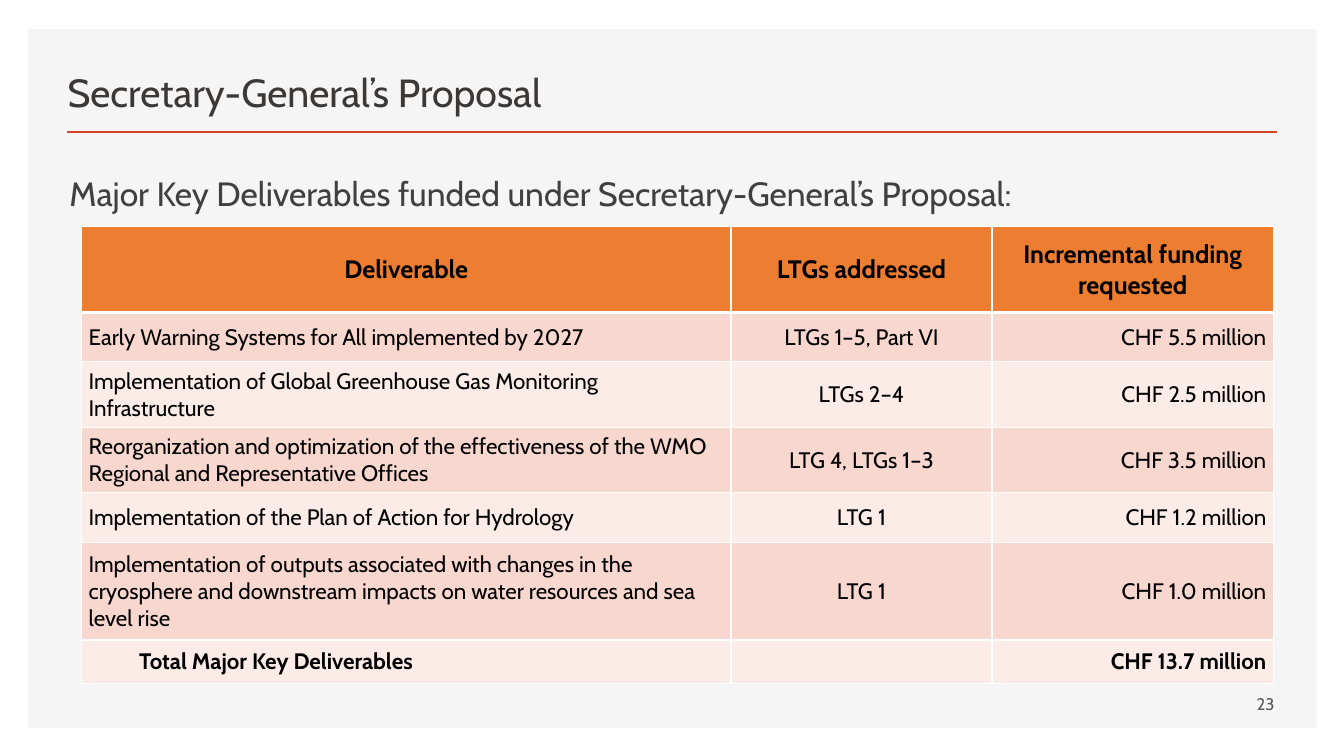
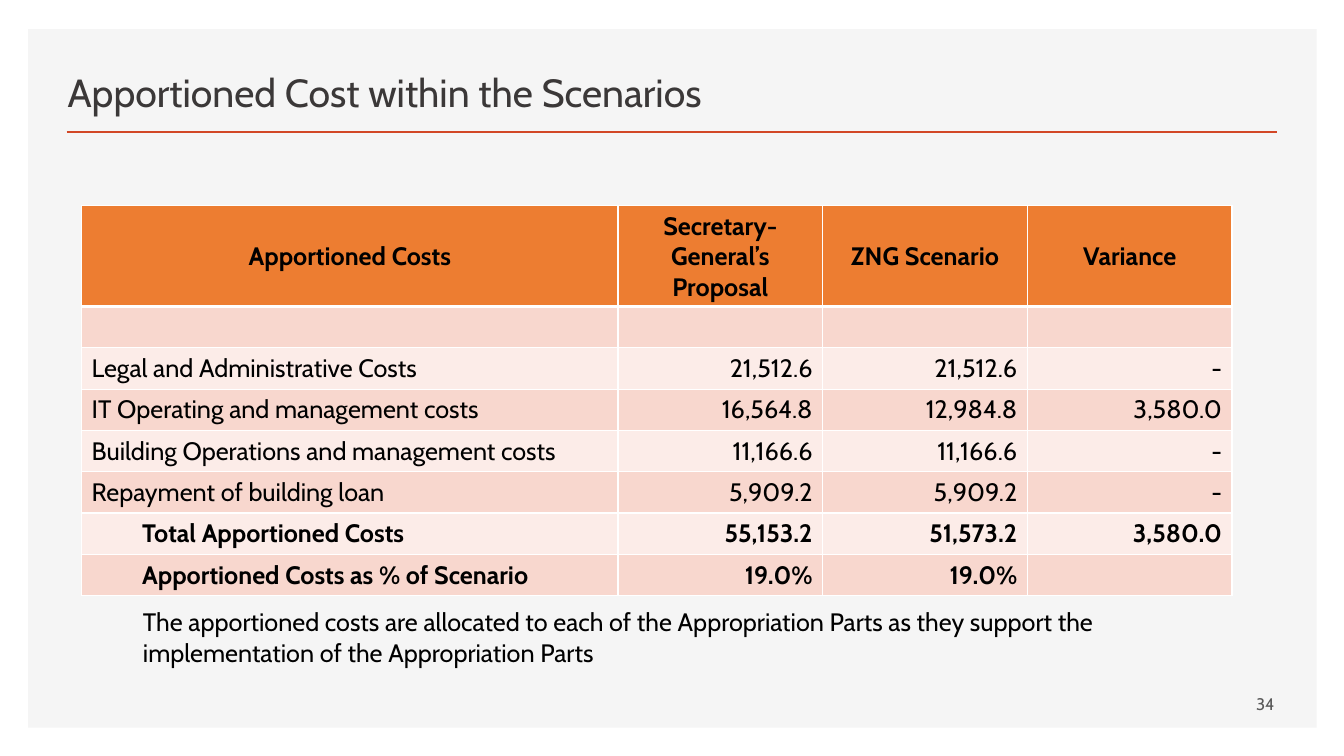
from dataclasses import dataclass

from lxml import etree
from pptx import Presentation
from pptx.dml.color import RGBColor
from pptx.enum import shapes, text
from pptx.oxml import ns
from pptx.util import Inches, Pt

LEFT, CENTER, RIGHT = text.PP_ALIGN.LEFT, text.PP_ALIGN.CENTER, text.PP_ALIGN.RIGHT


@dataclass(frozen=True)
class Theme:
    font: str = "Cabin"
    panel: str = "F5F5F5"
    rule: str = "D24726"
    title: str = "3B3838"
    subtitle: str = "404040"
    number: str = "595959"
    body: str = "000000"
    header: str = "ED7D31"
    bands: tuple[str, str] = ("F8D7CE", "FCECE8")
    border: str = "FFFFFF"
    title_size: int = 28
    subtitle_size: int = 24
    body_size: int = 18
    small_size: int = 16
    number_size: int = 12


THEME = Theme()


@dataclass(frozen=True)
class Box:
    left: float
    top: float
    width: float
    height: float

    def lengths(self) -> tuple:
        return tuple(Inches(value) for value in (self.left, self.top, self.width, self.height))


@dataclass(frozen=True)
class TableStyle:
    size: int
    margins: tuple[float, float]
    spacing: int = 0


@dataclass(frozen=True)
class TableSpec:
    left: float
    top: float
    columns: tuple[float, ...]
    heights: tuple[float, ...]
    alignments: tuple
    rows: tuple[tuple[str, ...], ...]
    total_rows: int
    style: TableStyle


PANEL = Box(0.28, 0.29, 12.78, 6.93)
TITLE = Box(0.57, 0.49, 9.37, 0.7)
SUBTITLE = Box(0.59, 1.67, 11.02, 0.5)
NOTE = Box(1.32, 5.97, 10.43, 0.71)
NUMBER = Box(9.16, 6.78, 3.58, 0.4)
HEADER_STYLE = TableStyle(THEME.body_size, (0.1, 0.05))
TOTAL_INDENT = 0.5

DELIVERABLES = TableSpec(
    left=0.81,
    top=2.25,
    columns=(6.44, 2.59, 2.79),
    heights=(0.85, 0.49, 0.65, 0.65, 0.49, 0.97, 0.43),
    alignments=(LEFT, CENTER, RIGHT),
    rows=(
        ("Deliverable", "LTGs addressed", "Incremental funding requested"),
        ("Early Warning Systems for All implemented by 2027", "LTGs 1–5, Part VI", "CHF 5.5 million"),
        ("Implementation of Global Greenhouse Gas Monitoring Infrastructure", "LTGs 2–4", "CHF 2.5 million"),
        (
            "Reorganization and optimization of the effectiveness of the WMO Regional and Representative Offices",
            "LTG 4, LTGs 1–3",
            "CHF 3.5 million",
        ),
        ("Implementation of the Plan of Action for Hydrology", "LTG 1", "CHF 1.2 million"),
        (
            "Implementation of outputs associated with changes in the cryosphere "
            "and downstream impacts on water resources and sea level rise",
            "LTG 1",
            "CHF 1.0 million",
        ),
        ("Total Major Key Deliverables", "", "CHF 13.7 million"),
    ),
    total_rows=1,
    style=TableStyle(THEME.small_size, (0.07, 0), 3),
)

COSTS = TableSpec(
    left=0.81,
    top=2.04,
    columns=(5.32,) + (2.03,) * 3,
    heights=(0.97,) + (0.41,) * 7,
    alignments=(LEFT, RIGHT, RIGHT, RIGHT),
    rows=(
        ("Apportioned Costs", "Secretary-General’s Proposal", "ZNG Scenario", "Variance"),
        ("", "", "", ""),
        ("Legal and Administrative Costs", "21,512.6", "21,512.6", "-"),
        ("IT Operating and management costs", "16,564.8", "12,984.8", "3,580.0"),
        ("Building Operations and management costs", "11,166.6", "11,166.6", "-"),
        ("Repayment of building loan", "5,909.2", "5,909.2", "-"),
        ("Total Apportioned Costs", "55,153.2", "51,573.2", "3,580.0"),
        ("Apportioned Costs as % of Scenario", "19.0%", "19.0%", ""),
    ),
    total_rows=2,
    style=TableStyle(THEME.body_size, (0.1, 0.05)),
)


def write(frame, words: str, size: int, color: str, alignment=LEFT, bold: bool = False) -> None:
    frame.text = words
    frame.word_wrap = True
    paragraph = frame.paragraphs[0]
    paragraph.alignment = alignment
    for run in paragraph.runs:
        run.font.name = THEME.font
        run.font.size = Pt(size)
        run.font.bold = bold
        run.font.color.rgb = RGBColor.from_string(color)


def add_text(slide, box: Box, words: str, size: int, color: str, alignment=LEFT, anchor=text.MSO_ANCHOR.TOP) -> None:
    frame = slide.shapes.add_textbox(*box.lengths()).text_frame
    write(frame, words, size, color, alignment)
    frame.vertical_anchor = anchor


def build_layout(layout, slide) -> None:
    panel = slide.shapes.add_shape(shapes.MSO_SHAPE.RECTANGLE, *PANEL.lengths())
    panel.shadow.inherit = False
    panel.fill.solid()
    panel.fill.fore_color.rgb = RGBColor.from_string(THEME.panel)
    panel.line.fill.background()
    rule = slide.shapes.add_connector(
        shapes.MSO_CONNECTOR.STRAIGHT, Inches(0.66), Inches(1.31), Inches(12.67), Inches(1.31)
    )
    rule.line.color.rgb = RGBColor.from_string(THEME.rule)
    rule.line.width = Pt(2)
    etree.SubElement(rule._element.spPr, ns.qn("a:effectLst"))
    for position, shape in enumerate((panel, rule), start=2):
        layout.shapes._spTree.insert(position, shape._element)


def add_slide(presentation, title: str, number: int):
    layout = presentation.slide_layouts.get_by_name("Title Only")
    slide = presentation.slides.add_slide(layout)
    if len(presentation.slides) == 1:
        build_layout(layout, slide)
    placeholder = slide.shapes.title
    placeholder.left, placeholder.top, placeholder.width, placeholder.height = TITLE.lengths()
    write(placeholder.text_frame, title, THEME.title_size, THEME.title)
    placeholder.text_frame.vertical_anchor = text.MSO_ANCHOR.BOTTOM
    add_text(slide, NUMBER, str(number), THEME.number_size, THEME.number, RIGHT, text.MSO_ANCHOR.MIDDLE)
    return slide


def set_borders(cell, is_header: bool) -> None:
    properties = cell._tc.get_or_add_tcPr()
    for side in "LRTB":
        width = 3 if is_header and side == "B" else 1
        line = etree.SubElement(properties, ns.qn(f"a:ln{side}"), w=str(Pt(width)))
        fill = etree.SubElement(line, ns.qn("a:solidFill"))
        etree.SubElement(fill, ns.qn("a:srgbClr"), val=THEME.border)


def fill_cell(cell, words: str, style: TableStyle, color: str, alignment, bold: bool, indent: float) -> None:
    horizontal, vertical = style.margins
    cell.margin_left = Inches(horizontal + indent)
    cell.margin_right = Inches(horizontal)
    cell.margin_top = cell.margin_bottom = Inches(vertical)
    cell.vertical_anchor = text.MSO_ANCHOR.MIDDLE
    cell.fill.solid()
    cell.fill.fore_color.rgb = RGBColor.from_string(color)
    write(cell.text_frame, words, style.size, THEME.body, alignment, bold)
    paragraph = cell.text_frame.paragraphs[0]
    paragraph.space_before = paragraph.space_after = Pt(style.spacing)


def add_table(slide, spec: TableSpec) -> None:
    box = Box(spec.left, spec.top, sum(spec.columns), sum(spec.heights))
    table = slide.shapes.add_table(len(spec.rows), len(spec.columns), *box.lengths()).table
    for column, width in zip(table.columns, spec.columns):
        column.width = Inches(width)
    first_total = len(spec.rows) - spec.total_rows
    for row_index, (row, height) in enumerate(zip(spec.rows, spec.heights)):
        table.rows[row_index].height = Inches(height)
        is_header = row_index == 0
        is_total = row_index >= first_total
        style = HEADER_STYLE if is_header else spec.style
        color = THEME.header if is_header else THEME.bands[(row_index - 1) % 2]
        for column_index, words in enumerate(row):
            cell = table.cell(row_index, column_index)
            alignment = CENTER if is_header else spec.alignments[column_index]
            indent = TOTAL_INDENT if is_total and column_index == 0 else 0
            set_borders(cell, is_header)
            fill_cell(cell, words, style, color, alignment, is_header or is_total, indent)


def main() -> None:
    presentation = Presentation()
    presentation.slide_width = Inches(13.33)
    presentation.slide_height = Inches(7.5)

    proposal = add_slide(presentation, "Secretary-General’s Proposal", 23)
    add_text(
        proposal,
        SUBTITLE,
        "Major Key Deliverables funded under Secretary-General’s Proposal:",
        THEME.subtitle_size,
        THEME.subtitle,
    )
    add_table(proposal, DELIVERABLES)

    scenarios = add_slide(presentation, "Apportioned Cost within the Scenarios", 34)
    add_table(scenarios, COSTS)
    add_text(
        scenarios,
        NOTE,
        "The apportioned costs are allocated to each of the Appropriation Parts "
        "as they support the implementation of the Appropriation Parts",
        THEME.body_size,
        THEME.body,
    )
    presentation.save("out.pptx")


if __name__ == "__main__":
    main()
